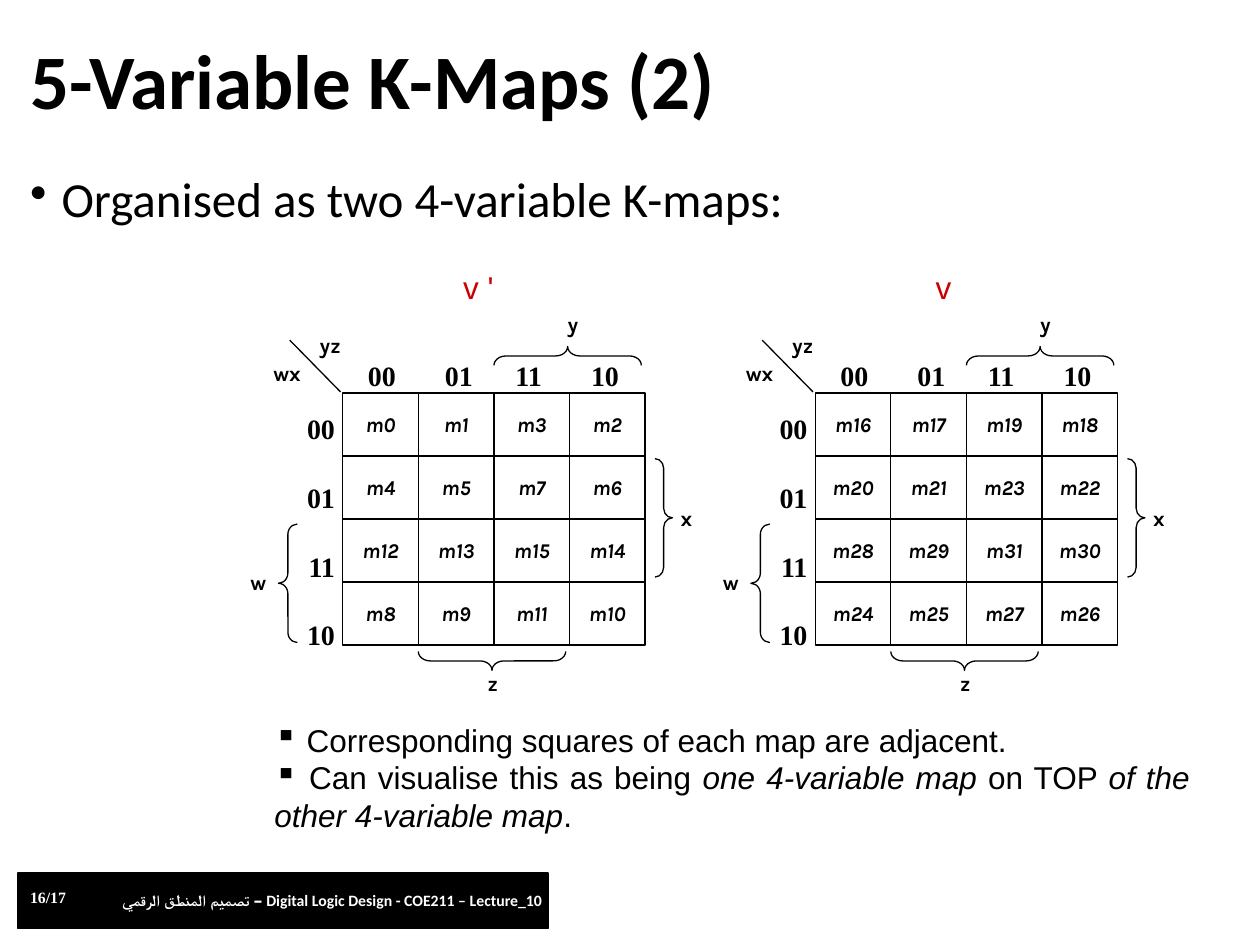
from lxml import etree
from pptx import Presentation
from pptx.dml.color import RGBColor
from pptx.enum.shapes import MSO_CONNECTOR as Conn, MSO_SHAPE as Shape
from pptx.enum.text import MSO_ANCHOR as Anchor, PP_ALIGN as Align
from pptx.oxml.ns import qn
from pptx.util import Inches, Pt

WIDTH, HEIGHT = 10, 7.5
CELL_W, CELL_H = 0.6, 0.5
GRAY = [0, 1, 3, 2]
GRAY_LABELS = [f"{n:02b}" for n in GRAY]
BLACK, WHITE, RED = "000000", "FFFFFF", "CC0000"


def rgb(value):
    return RGBColor.from_string(value)


def lengths(box):
    return [Inches(v) for v in box]


def style(tf, size, font, color=BLACK, bold=None, italic=None, align=Align.LEFT):
    for p in tf.paragraphs:
        p.alignment = align
        for r in p.runs:
            r.font.size, r.font.name = Pt(size), font
            r.font.bold, r.font.italic = bold, italic
            r.font.color.rgb = rgb(color)


def add_text(shapes, box, text, size, font, wrap=True, **look):
    tf = shapes.add_textbox(*lengths(box)).text_frame
    tf.word_wrap = wrap
    tf.text = text
    style(tf, size, font, **look)
    return tf


def add_bullet(p, char, indent=0):
    pPr = p._p.get_or_add_pPr()
    pPr.set("marL", str(Inches(indent)))
    pPr.set("indent", str(-Inches(indent)))
    etree.SubElement(pPr, qn("a:buChar")).set("char", char)


def add_tabs(p, stops):
    tabs = etree.SubElement(p._p.get_or_add_pPr(), qn("a:tabLst"))
    for stop in stops:
        etree.SubElement(tabs, qn("a:tab"), pos=str(Inches(stop)), algn="l")


def add_line(shapes, x1, y1, x2, y2):
    line = shapes.add_connector(Conn.STRAIGHT, *lengths((x1, y1, x2, y2)))
    line.line.color.rgb = rgb(BLACK)
    line.line.width = Pt(0.75)
    etree.SubElement(line._element.spPr, qn("a:effectLst"))
    return line


def add_outline(shapes, kind, box):
    sp = shapes.add_shape(kind, *lengths(box))
    sp.shadow.inherit = False
    sp.fill.background()
    sp.line.color.rgb = rgb(BLACK)
    sp.line.width = Pt(0.75)
    return sp


def add_brace(shapes, box, rotation, curve):
    """Draw a left brace that fills box once it has been turned."""
    x, y, w, h = box
    if rotation in (90, 270):
        x, y, w, h = x + (w - h) / 2, y + (h - w) / 2, h, w
    brace = add_outline(shapes, Shape.LEFT_BRACE, (x, y, w, h))
    brace.rotation = rotation
    brace.adjustments[0] = curve


def add_kmap(s, left, top, caption, first):
    """Draw a 4 by 4 map; inner places are in columns and rows from its corner."""
    shapes = s.shapes.add_group_shape().shapes

    def point(col, row):
        return left + col * CELL_W, top + row * CELL_H

    def area(col, row, cols, rows):
        return *point(col, row), cols * CELL_W, rows * CELL_H

    frame = add_outline(shapes, Shape.RECTANGLE, area(0, 0, 4, 4))
    for i in (1, 2, 3):
        across = add_line(shapes, *point(0, i), *point(4, i))
        down = add_line(shapes, *point(i, 0), *point(i, 4))
        if i == 2:
            for line, begin, end in ((across, 1, 3), (down, 0, 2)):
                line.begin_connect(frame, begin)
                line.end_connect(frame, end)
    add_line(shapes, *point(-0.03, -0.02), *point(-0.7, -0.84))

    for row, high in enumerate(GRAY):
        for col, low in enumerate(GRAY):
            add_text(shapes, area(col, row + 0.2, 1, 0.8), f"m{first + 4 * high + low}",
                     12, "Karla", bold=True, italic=True, align=Align.CENTER)

    for box, rotation, curve in [
        ((-0.85, 2.08, 0.25, 1.88), 0, 0.54),
        ((2, -0.74, 1.95, 0.3), 90, 0.63),
        ((4.13, 1.04, 0.23, 1.88), 180, 0.55),
        ((1, 4.1, 1.95, 0.3), 270, 0.63),
    ]:
        add_brace(shapes, area(*box), rotation, curve)

    for name, box in [
        ("w", (-1.48, 2.7, 0.73, 0.8)),
        ("x", (4.18, 1.68, 0.73, 0.8)),
        ("y", (2.68, -1.4, 0.73, 0.64)),
        ("z", (1.62, 4.3, 0.73, 0.6)),
        ("wx", (-1.17, -0.62, 0.87, 0.72)),
        ("yz", (-0.6, -1.06, 0.87, 0.64)),
    ]:
        add_text(shapes, area(*box), name, 12, "Karla", bold=True, align=Align.CENTER)

    rows = add_text(shapes, area(-0.67, 0.2, 0.73, 4.14), "\n".join(GRAY_LABELS),
                    16, "Times New Roman", bold=True, align=Align.RIGHT)
    for p in rows.paragraphs[1:]:
        p.space_before = Pt(20)
    cols = add_text(shapes, area(0.17, -0.64, 3.73, 0.8), "\t".join(GRAY_LABELS),
                    16, "Times New Roman", bold=True)
    add_tabs(cols.paragraphs[0], (0.61, 1.17, 1.77))
    add_text(shapes, area(1.43, -2.08, 0.83, 0.8), caption, 18, "Arial", color=RED)


def add_heading(s, left, width):
    title = s.shapes.title
    title.left, title.top, title.width, title.height = lengths((left, 0.25, width, 0.85))
    tf = title.text_frame
    tf.text = "5-Variable K-Maps (2)"
    tf.vertical_anchor = Anchor.MIDDLE
    style(tf, 44, "Calibri", bold=True)
    tf.paragraphs[0].line_spacing = 0.9

    lead = add_text(s.shapes, (left, 1.34, width, 0.6),
                    "Organised as two 4-variable K-maps:", 28, "Calibri")
    p = lead.paragraphs[0]
    p.line_spacing, p.space_before = 0.9, Pt(10)
    add_bullet(p, "•", 0.25)


def add_notes_on_maps(s, box):
    tf = add_text(s.shapes, box, " Corresponding squares of each map are adjacent.",
                  18, "Arial")
    p = tf.add_paragraph()
    parts = [" Can visualise this as being ", "one 4-variable map", " on TOP ",
             "of the other 4-variable map", "."]
    for part in parts:
        p.add_run().text = part
    style(tf, 18, "Arial", align=Align.JUSTIFY)
    for r in p.runs[1::2]:
        r.font.italic = True
    for p in tf.paragraphs:
        add_bullet(p, "▪")


def add_footer(s, left, top, width, height):
    bar = add_outline(s.shapes, Shape.RECTANGLE, (left, top, width, height))
    bar.fill.solid()
    bar.fill.fore_color.rgb = rgb(BLACK)
    bar.line.width = Pt(1)
    add_text(s.shapes, (left, top + 0.07, 0.51, 0.25), "16/17", 9, "Times New Roman",
             wrap=False, color=WHITE, bold=True)
    add_text(s.shapes, (left + 0.73, top + 0.09, 3.72, 0.25),
             "تصميم المنطق الرقمي – Digital Logic Design - COE211 – Lecture_10",
             9, "Calibri", color=WHITE, bold=True)


def main():
    prs = Presentation()
    prs.slide_width, prs.slide_height = Inches(WIDTH), Inches(HEIGHT)
    s = prs.slides.add_slide(prs.slide_layouts[5])
    add_footer(s, 0.14, 6.93, 4.21, 0.44)
    add_heading(s, 0.14, 9.74)
    for i, caption in enumerate(("v '", "v")):
        add_kmap(s, 2.72 + 3.75 * i, 3.12, caption, 16 * i)
    add_notes_on_maps(s, (2.08, 5.67, 7.46, 1))
    prs.save("out.pptx")


if __name__ == "__main__":
    main()
